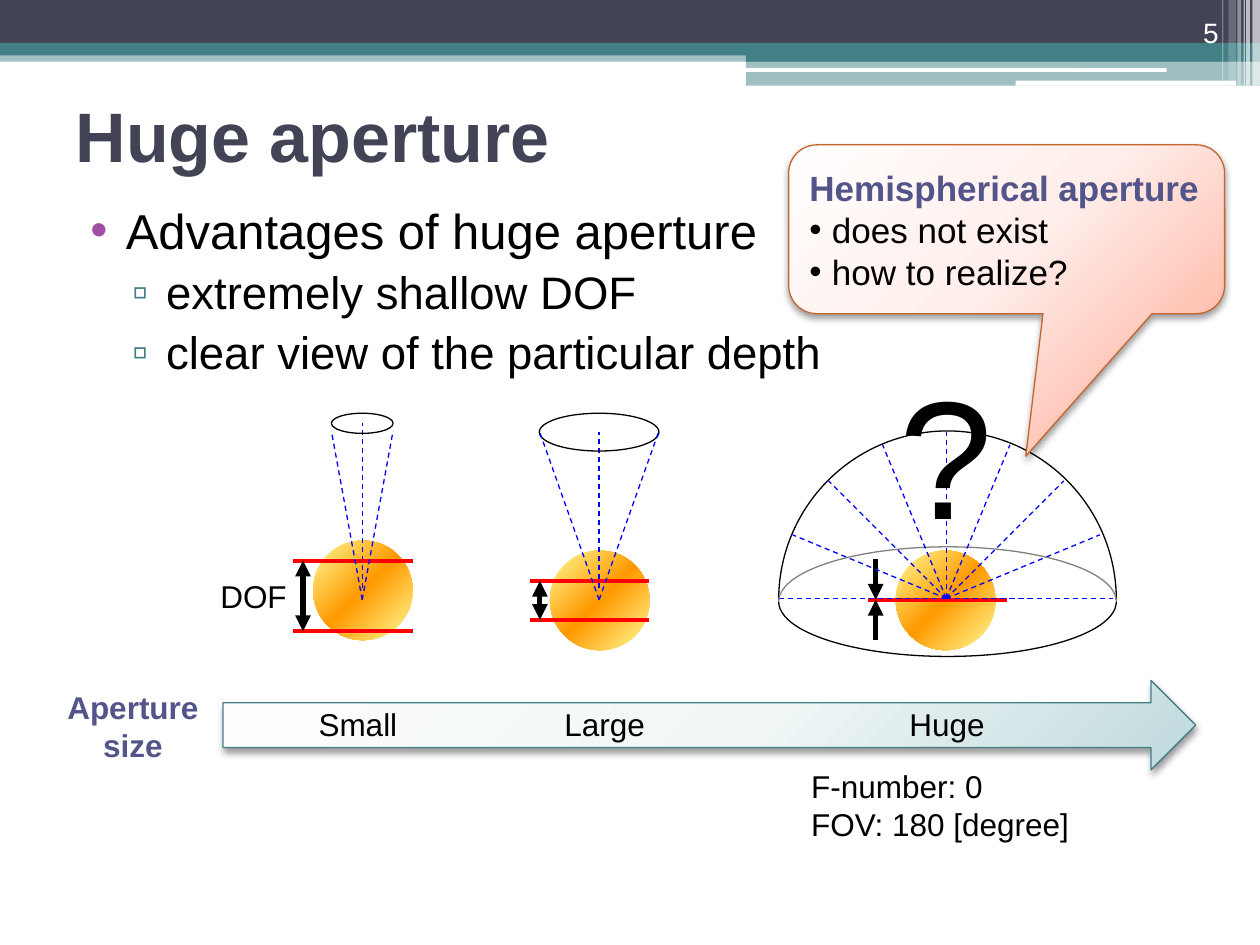
import math

from lxml import etree
from pptx import Presentation
from pptx.dml.color import RGBColor
from pptx.enum import dml, shapes, text
from pptx.oxml import ns
from pptx.util import Inches, Pt

NAVY = RGBColor(0x42, 0x44, 0x56)
TEAL = RGBColor(0x43, 0x80, 0x86)
INDIGO = RGBColor(0x53, 0x54, 0x8A)
PURPLE = RGBColor(0xA0, 0x4D, 0xA3)
RUST = RGBColor(0xC4, 0x65, 0x2D)
WHITE = RGBColor(0xFF, 0xFF, 0xFF)
BLACK = RGBColor(0, 0, 0)
GRAY = RGBColor(0x80, 0x80, 0x80)
RED = RGBColor(0xFF, 0, 0)
BLUE = RGBColor(0, 0, 0xFF)
SPHERE = [(0, "FFFF99"), (50, "FF9900"), (100, "FFFF99")]
PEACH = [(0, "FFFEFD"), (55, "FFEFEC"), (100, "FFBFAE")]
MIST = [(0, "FEFEFE"), (55, "F0F6F6"), (100, "BFD9DD")]
FONT = "Arial"
KIND = shapes.MSO_SHAPE
LEFT, CENTER, RIGHT = text.PP_ALIGN.LEFT, text.PP_ALIGN.CENTER, text.PP_ALIGN.RIGHT


def inches(box):
    return [Inches(value) for value in box]


def child(parent, tag, **attributes):
    return etree.SubElement(parent, ns.qn(tag), {k: str(v) for k, v in attributes.items()})


def add_shape(slide, kind, box, fill=None, line=None, alpha=100):
    shape = slide.shapes.add_shape(kind, *inches(box))
    shape.shadow.inherit = False
    if fill is None:
        shape.fill.background()
    else:
        shape.fill.solid()
        shape.fill.fore_color.rgb = fill
        if alpha < 100:
            child(shape.element.spPr.find(".//" + ns.qn("a:srgbClr")), "a:alpha", val=alpha * 1000)
    if line is None:
        shape.line.fill.background()
    else:
        shape.line.color.rgb = line
        shape.line.width = Pt(0.75)
    return shape


def set_gradient(shape, stops, angle=None):
    """Linear gradient at an angle, or a radial one from beyond the top left."""
    properties = shape.element.spPr
    gradient = etree.Element(ns.qn("a:gradFill"), rotWithShape="1")
    stop_list = child(gradient, "a:gsLst")
    for position, color in stops:
        child(child(stop_list, "a:gs", pos=position * 1000), "a:srgbClr", val=color)
    if angle is None:
        radial = child(gradient, "a:path", path="circle")
        child(radial, "a:fillToRect", l=-40000, t=-90000, r=140000, b=190000)
    else:
        child(gradient, "a:lin", ang=angle * 60000, scaled=1)
    properties.replace(properties.find(ns.qn("a:noFill")), gradient)


def set_shadow(shape):
    effects = shape.element.spPr.find(ns.qn("a:effectLst"))
    shadow = child(effects, "a:outerShdw", blurRad=Pt(4.1), dist=Pt(2), dir=90 * 60000, rotWithShape=0)
    child(child(shadow, "a:srgbClr", val="000000"), "a:alpha", val=40000)


def add_line(slide, start, end, color, width, dashed=False, heads=()):
    connector = slide.shapes.add_connector(shapes.MSO_CONNECTOR.STRAIGHT, *inches(start + end))
    connector.line.color.rgb = color
    connector.line.width = Pt(width)
    if dashed:
        connector.line.dash_style = dml.MSO_LINE.DASH
    for head in heads:
        child(connector.line._get_or_add_ln(), head, type="triangle")
    child(connector.element.spPr, "a:effectLst")


def add_ray(slide, start, end):
    add_line(slide, start, end, BLUE, 0.75, dashed=True)


def add_half_ellipse(slide, box, upper, color=BLACK):
    arc = add_shape(slide, KIND.ARC, box, line=color)
    half_turn = 108  # 180 degrees in adjustment units
    arc.adjustments[0], arc.adjustments[1] = (half_turn, 0) if upper else (0, half_turn)


def add_run(paragraph, content, size, color=BLACK, bold=False):
    run = paragraph.add_run()
    run.text = content
    run.font.name, run.font.size, run.font.bold = FONT, Pt(size), bold
    run.font.color.rgb = color


def set_bullet(paragraph, symbol, margin, hanging, color=BLACK):
    properties = paragraph._p.get_or_add_pPr()
    properties.set("marL", str(Inches(margin)))
    properties.set("indent", str(-Inches(hanging)))
    child(child(properties, "a:buClr"), "a:srgbClr", val=color)
    child(properties, "a:buFont", typeface=FONT)
    child(properties, "a:buChar", char=symbol)


def add_label(slide, box, lines, size=18, color=BLACK, bold=False, align=LEFT):
    frame = slide.shapes.add_textbox(*inches(box)).text_frame
    frame.word_wrap = False
    frame.auto_size = text.MSO_AUTO_SIZE.SHAPE_TO_FIT_TEXT
    for index, content in enumerate(lines):
        paragraph = frame.add_paragraph() if index else frame.paragraphs[0]
        paragraph.alignment = align
        add_run(paragraph, content, size, color, bold)
    return frame


def add_banner(slide, box):
    left, top, width, _ = box
    right, split = left + width, left + 5.92
    # Full-width bands, then the deeper block on the right
    for x, y, height, color, alpha in [
            (left, 0.4, 0.09, TEAL, 50), (left, 0, 0.34, NAVY, 100), (left, 0.34, 0.1, TEAL, 100),
            (split, 0.39, 0.1, TEAL, 100), (split, 0.48, 0.2, TEAL, 50)]:
        add_shape(slide, KIND.RECTANGLE, (x, top + y, right - x, height), color, alpha=alpha)
    for x, y, length, height in [(5.91, 0.54, 3.35, 0.03), (8.06, 0.64, 1.75, 0.04)]:
        add_shape(slide, KIND.ROUNDED_RECTANGLE, (left + x, top + y, length, height), WHITE)
    # Translucent stripes at the right edge
    for x, stripe, height, alpha in [
            (9.94, 0.06, 0.68, 65), (9.89, 0.03, 0.68, 65), (9.87, 0.01, 0.68, 60),
            (9.82, 0.03, 0.68, 40), (9.75, 0.06, 0.64, 20), (9.7, 0.01, 0.64, 30)]:
        add_shape(slide, KIND.RECTANGLE, (left + x, top, stripe, height), WHITE, alpha=alpha)
    number = add_label(slide, (right - 1.06, top + 0.08, 0.83, 0.36), ["5"], 16, WHITE, align=RIGHT)
    number.word_wrap = True
    number.auto_size = text.MSO_AUTO_SIZE.NONE
    number.vertical_anchor = text.MSO_ANCHOR.BOTTOM


def set_title(slide, box):
    title = slide.shapes.title
    title.left, title.top, title.width, title.height = inches(box)
    title.text_frame.vertical_anchor = text.MSO_ANCHOR.MIDDLE
    paragraph = title.text_frame.paragraphs[0]
    paragraph.alignment = LEFT
    add_run(paragraph, "Huge aperture", 40, NAVY, True)


def add_advantages(slide, box):
    frame = slide.shapes.add_textbox(*inches(box)).text_frame
    frame.word_wrap = True
    first = frame.paragraphs[0]
    set_bullet(first, "•", 0.4, 0.28, PURPLE)
    add_run(first, "Advantages of huge aperture", 28)
    for content in ("extremely shallow DOF", "clear view of the particular depth"):
        paragraph = frame.add_paragraph()
        paragraph.level = 1
        set_bullet(paragraph, "▫", 0.72, 0.27, TEAL)
        paragraph.space_before = Pt(3)
        add_run(paragraph, content, 26)


def add_sphere(slide, center, top):
    sphere = add_shape(slide, KIND.OVAL, (center - 0.39, top, 0.79, 0.79))
    set_gradient(sphere, SPHERE, 45)


def add_lens(slide, box, sphere_top, near, far):
    """Aperture ellipse in the box, with its rays, sphere and depth of field."""
    left, top, width, height = box
    center, focus = left + width / 2, 4.76
    add_sphere(slide, center, sphere_top)
    add_ray(slide, (center, focus - 0.09), (center, top + height / 2))
    for upper in (True, False):
        add_half_ellipse(slide, box, upper)
    for depth in (near, far):
        add_line(slide, (center - 0.55, depth), (center + 0.4, depth), RED, 2.25)
    add_line(slide, (center - 0.47, near), (center - 0.47, far), BLACK, 3, heads=("a:headEnd", "a:tailEnd"))
    for edge in (left, left + width):
        add_ray(slide, (center, focus), (edge, 3.42))


def add_size_arrow(slide, box):
    left, top, _, height = box
    arrow = add_shape(slide, KIND.RIGHT_ARROW, box, line=TEAL)
    set_gradient(arrow, MIST)
    set_shadow(arrow)
    add_label(slide, (left - 1.34, top + 0.01, 1.25, height), ["Aperture", "size"], 18, INDIGO, True, CENTER)
    for offset, width, name in [(0.66, 0.83, "Small"), (2.61, 0.88, "Large"), (5.35, 0.83, "Huge")]:
        add_label(slide, (left + offset, top + 0.15, width, 0.4), [name])


def add_hemisphere(slide, box):
    left, top, width, _ = box
    center, focus = left + width / 2 - 0.01, top + 1.34
    # Sphere with a vanishing depth of field
    add_sphere(slide, center - 0.01, 4.37)
    add_line(slide, (6.89, focus), (7.99, focus), RED, 2.25)
    for reach in (0.32, -0.32):
        add_line(slide, (6.95, focus), (6.95, focus + reach), BLACK, 3, heads=("a:headEnd",))
    # Dome, rim and rays
    rim = (left, top + 0.92, width, 0.87)
    add_half_ellipse(slide, box, True)
    add_half_ellipse(slide, rim, True, GRAY)
    source = focus - 0.01
    for step in range(9):
        angle = math.radians(22.5 * step)
        tip = (center + 1.32 * math.cos(angle), source - 1.32 * math.sin(angle))
        add_ray(slide, (center, source), tip)
    add_half_ellipse(slide, rim, False)
    add_label(slide, (left + 0.16, top + 2.62, 2.27, 0.71), ["F-number: 0", "FOV: 180 [degree]"])


def add_callout(slide, box):
    callout = add_shape(slide, KIND.ROUNDED_RECTANGULAR_CALLOUT, box, line=RUST)
    for index, value in enumerate((0.044, 1.344, 0.167)):
        callout.adjustments[index] = value
    set_gradient(callout, PEACH)
    set_shadow(callout)
    frame = callout.text_frame
    frame.vertical_anchor = text.MSO_ANCHOR.MIDDLE
    heading = frame.paragraphs[0]
    heading.alignment = LEFT
    add_run(heading, "Hemispherical aperture", 20, INDIGO, True)
    for content in ("does not exist", "how to realize?"):
        paragraph = frame.add_paragraph()
        paragraph.alignment = LEFT
        set_bullet(paragraph, "•", 0.18, 0.18)
        add_run(paragraph, content, 20)


def main():
    presentation = Presentation()
    presentation.slide_width, presentation.slide_height = Inches(10), Inches(7.5)
    slide = presentation.slides.add_slide(presentation.slide_layouts[5])
    add_banner(slide, (0, 0, 10, 0.68))
    set_title(slide, (0.5, 0.68, 9, 0.77))
    add_advantages(slide, (0.5, 1.54, 9, 1.6))
    add_lens(slide, (2.63, 3.28, 0.49, 0.16), 4.29, 4.45, 5.01)
    add_lens(slide, (4.28, 3.28, 0.95, 0.3), 4.37, 4.61, 4.92)
    add_label(slide, (1.65, 4.53, 0.91, 0.4), ["DOF"])
    add_size_arrow(slide, (1.77, 5.4, 7.72, 0.71))
    add_hemisphere(slide, (6.18, 3.42, 2.68, 2.68))
    add_callout(slide, (6.26, 1.15, 3.46, 1.34))
    add_label(slide, (7.04, 2.74, 0.95, 1.72), ["?"], 96)
    presentation.save("out.pptx")


if __name__ == "__main__":
    main()
